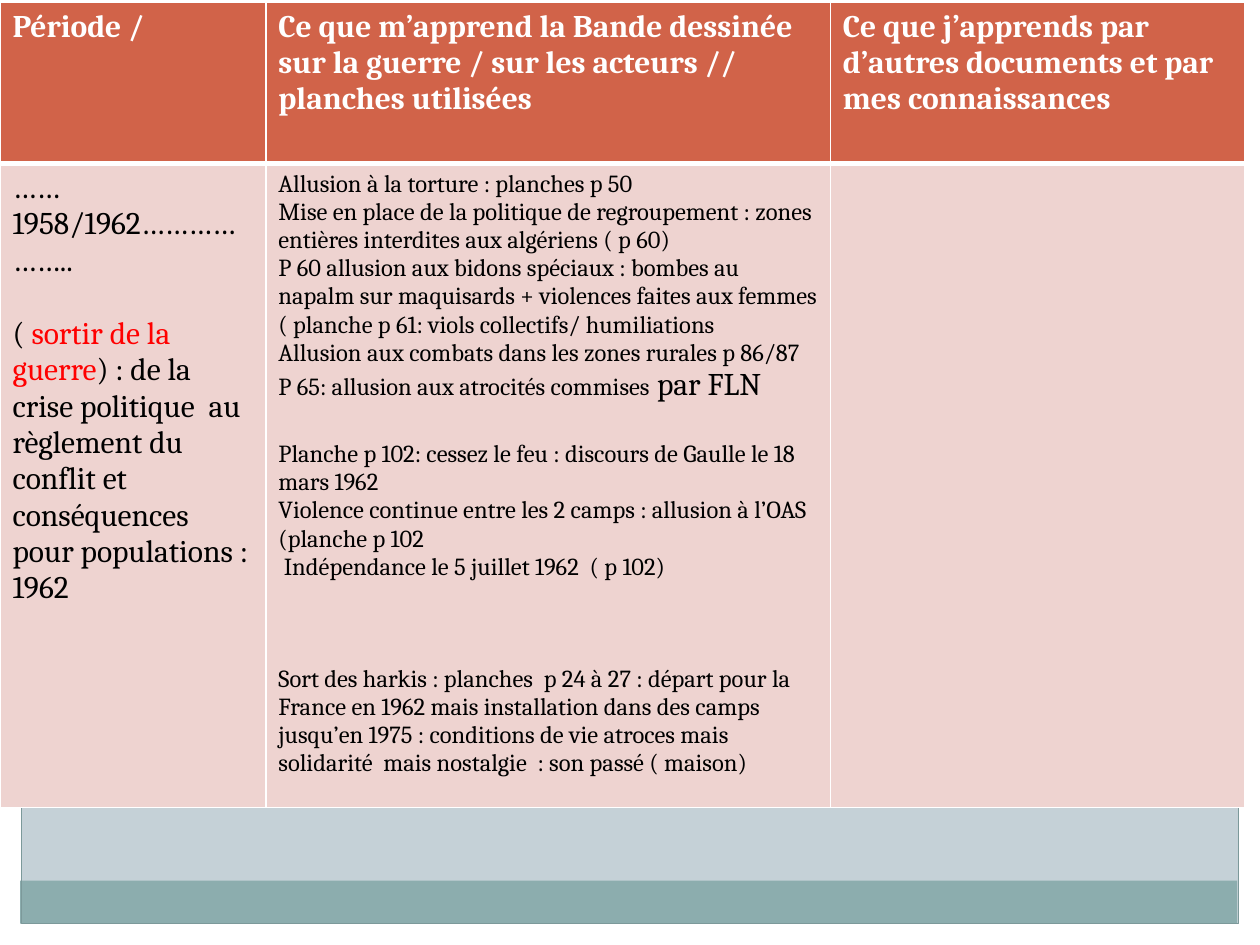
from lxml import etree
from pptx import Presentation
from pptx import util as u
from pptx.dml.color import RGBColor
from pptx.enum import shapes
from pptx.oxml import ns

WHITE, BLACK, RED = "FFFFFF", "000000", "FF0000"
BACKGROUND, BAND, FRAME = "C5D1D7", "8CADAE", "7C999A"
HEADER, BODY = "D16349", "EED3D0"

COLUMN_WIDTHS = [2.11, 4.48, 3.29]
ROW_HEIGHTS = [1.28, 5.11]

HEADINGS = [
    "Période /",
    "Ce que m’apprend la Bande dessinée  sur la guerre / sur les acteurs //  planches utilisées",
    "Ce que j’apprends par d’autres documents et par mes connaissances",
]
# Each paragraph: space before in points, then its (text, format) runs.
PERIOD = [
    (0, [("……1958/1962………………..", {})]),
    (21, [("( ", {}), ("sortir de la guerre", {"color": RED}),
          (") : de la crise politique  au", {})]),
    (0, [("règlement du conflit et conséquences pour populations : 1962", {})]),
]
SMALL = {"size": 14}
COMIC = [
    (0, [("Allusion à la torture : planches p 50", SMALL)]),
    (0, [("Mise en place de la politique de regroupement : zones entières interdites "
          "aux algériens ( p 60)", SMALL)]),
    (0, [("P 60 allusion aux bidons spéciaux : bombes au napalm sur maquisards + violences "
          "faites aux femmes ( planche p 61: viols collectifs/ humiliations", SMALL)]),
    (0, [("Allusion aux combats dans les zones rurales p 86/87", SMALL)]),
    (0, [("P 65: allusion aux atrocités commises", SMALL), (" par FLN", {})]),
    (21, [("Planche p 102: cessez le feu : discours de Gaulle le 18 mars 1962", SMALL)]),
    (0, [("Violence continue entre les 2 camps : allusion à l’OAS (planche p 102", SMALL)]),
    (0, [(" Indépendance le 5 juillet 1962  ( p 102)", SMALL)]),
    (48, [("Sort des harkis : planches  p 24 à 27 : départ pour la France en 1962 mais "
           "installation dans des camps  jusqu’en 1975 : conditions de vie atroces mais "
           "solidarité  mais nostalgie  : son passé ( maison)", SMALL)]),
]


def rgb(value):
    return RGBColor.from_string(value)


def add_text(paragraph, text, size=18, color=BLACK, bold=False, font="Cambria"):
    run = paragraph.add_run()
    run.text = text
    run.font.name = font
    run.font.size = u.Pt(size)
    run.font.bold = bold
    run.font.color.rgb = rgb(color)


def set_borders(cell, **widths):
    """Draw white cell borders; widths in points by side letter."""
    properties = cell._tc.get_or_add_tcPr()
    for index, side in enumerate("LRTB"):
        line = etree.Element(ns.qn(f"a:ln{side}"), w=str(u.Pt(widths.get(side, 1))))
        fill = etree.SubElement(line, ns.qn("a:solidFill"))
        etree.SubElement(fill, ns.qn("a:srgbClr"), val=WHITE)
        properties.insert(index, line)


class SlideBuilder:
    def __init__(self, presentation):
        self.slide = presentation.slides.add_slide(presentation.slide_layouts[6])
        fill = self.slide.background.fill
        fill.solid()
        fill.fore_color.rgb = rgb(BACKGROUND)

    def rectangle(self, left, top, width, height, fill=None, line=None):
        shape = self.slide.shapes.add_shape(
            shapes.MSO_SHAPE.RECTANGLE,
            u.Inches(left), u.Inches(top), u.Inches(width), u.Inches(height))
        shape.shadow.inherit = False
        if fill:
            shape.fill.solid()
            shape.fill.fore_color.rgb = rgb(fill)
        else:
            shape.fill.background()
        if line:
            shape.line.color.rgb = rgb(line)
            shape.line.width = u.Pt(0.75)
        else:
            shape.line.fill.background()

    def table(self, left, top, column_widths, row_heights):
        table = self.slide.shapes.add_table(
            len(row_heights), len(column_widths), u.Inches(left), u.Inches(top),
            u.Inches(sum(column_widths)), u.Inches(sum(row_heights))).table
        table.horz_banding = False
        for column, width in zip(table.columns, column_widths):
            column.width = u.Inches(width)
        for row, height in zip(table.rows, row_heights):
            row.height = u.Inches(height)
        return table

    def cell(self, cell, paragraphs, fill, borders, **style):
        cell.fill.solid()
        cell.fill.fore_color.rgb = rgb(fill)
        set_borders(cell, **borders)
        frame = cell.text_frame
        for index, (space, runs) in enumerate(paragraphs):
            paragraph = frame.add_paragraph() if index else frame.paragraphs[0]
            paragraph.space_before = u.Pt(space)
            for text, run_style in runs:
                add_text(paragraph, text, **{**style, **run_style})


def main():
    presentation = Presentation()
    presentation.slide_width = u.Inches(10)
    presentation.slide_height = u.Inches(7.5)
    builder = SlideBuilder(presentation)

    for margin in [(0, 7.33, 10, 0.17), (0, 0, 10, 1.52),
                   (0, 0, 0.17, 7.5), (9.83, 0, 0.17, 7.5)]:
        builder.rectangle(*margin, fill=WHITE)
    builder.rectangle(0.16, 6.99, 9.66, 0.34, fill=BAND)
    builder.rectangle(0.17, 0.17, 9.66, 7.16, line=FRAME)

    table = builder.table(0, 0.02, COLUMN_WIDTHS, ROW_HEIGHTS)
    for column, (heading, content) in enumerate(zip(HEADINGS, [PERIOD, COMIC, []])):
        builder.cell(table.cell(0, column), [(0, [(heading, {})])], HEADER, {"B": 3},
                     color=WHITE, bold=True)
        builder.cell(table.cell(1, column), content, BODY, {"T": 3})

    presentation.save("out.pptx")


if __name__ == "__main__":
    main()
